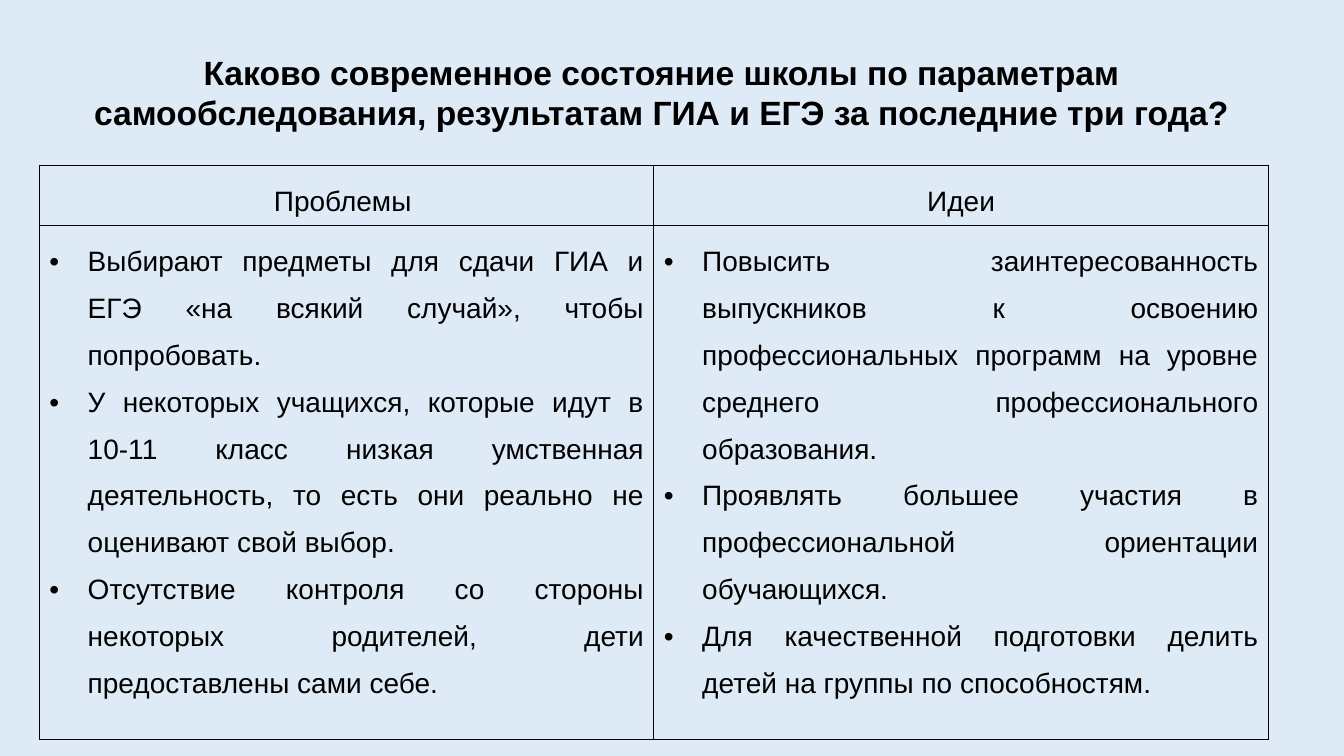
from dataclasses import dataclass

from lxml.etree import SubElement
from pptx import Presentation
from pptx.dml.color import RGBColor
from pptx.enum.text import MSO_ANCHOR, MSO_AUTO_SIZE, PP_ALIGN
from pptx.oxml.ns import qn
from pptx.util import Inches, Pt


@dataclass(frozen=True)
class Theme:
    font: str = "Arial"
    ink: RGBColor = RGBColor(0x00, 0x00, 0x00)
    background: RGBColor = RGBColor(0xDE, 0xEB, 0xF7)
    title_size: int = 24
    body_size: int = 20
    border: int = 1
    spacing: float = 1.5
    indent: float = 0.38


THEME = Theme()

TITLE = (
    "Каково современное состояние школы по параметрам "
    "самообследования, результатам ГИА и ЕГЭ за последние три года?"
)

COLUMNS = [
    ("Проблемы ", [
        "Выбирают предметы для сдачи ГИА и ЕГЭ «на всякий случай», чтобы попробовать.",
        "У некоторых учащихся, которые идут в 10-11 класс низкая умственная "
        "деятельность, то есть они реально не оценивают свой выбор.",
        "Отсутствие контроля со стороны некоторых родителей, дети предоставлены сами себе.",
    ]),
    ("Идеи", [
        "Повысить заинтересованность выпускников к освоению профессиональных "
        "программ на уровне среднего профессионального образования.",
        "Проявлять большее участия в профессиональной ориентации обучающихся.",
        "Для качественной подготовки делить детей на группы по способностям.",
    ]),
]


def add_span(para, text, size, bold=False):
    span = para.add_run()
    span.text = text
    span.font.name = THEME.font
    span.font.size = Pt(size)
    span.font.bold = bold
    span.font.color.rgb = THEME.ink


def add_bullet(para):
    properties = para._p.get_or_add_pPr()
    properties.set("marL", str(Inches(THEME.indent)))
    properties.set("indent", str(-Inches(THEME.indent)))
    SubElement(properties, qn("a:buFont"), typeface=THEME.font)
    SubElement(properties, qn("a:buChar"), char="•")


def style_cell(cell):
    properties = cell._tc.get_or_add_tcPr()
    for side in ("lnL", "lnR", "lnT", "lnB"):
        line = SubElement(properties, qn(f"a:{side}"), w=str(Pt(THEME.border)))
        fill = SubElement(line, qn("a:solidFill"))
        SubElement(fill, qn("a:srgbClr"), val=str(THEME.ink))
    cell.fill.background()


def fill_cell(cell, texts, alignment, bulleted=False):
    style_cell(cell)
    frame = cell.text_frame
    for index, text in enumerate(texts):
        para = frame.add_paragraph() if index else frame.paragraphs[0]
        para.alignment = alignment
        para.line_spacing = THEME.spacing
        if bulleted:
            add_bullet(para)
        add_span(para, text, THEME.body_size)


def place_title(page, left, top, width, height):
    box = page.shapes.title
    box.left, box.top = Inches(left), Inches(top)
    box.width, box.height = Inches(width), Inches(height)
    frame = box.text_frame
    frame.word_wrap = True
    frame.auto_size = MSO_AUTO_SIZE.NONE
    frame.vertical_anchor = MSO_ANCHOR.TOP
    para = frame.paragraphs[0]
    para.alignment = PP_ALIGN.CENTER
    add_span(para, TITLE, THEME.title_size, bold=True)


def place_table(page, left, top, width, height, header_height):
    table = page.shapes.add_table(
        2, len(COLUMNS), Inches(left), Inches(top), Inches(width), Inches(height)
    ).table
    table.first_row = False
    table.horz_banding = False
    table.rows[0].height = Inches(header_height)
    table.rows[1].height = Inches(height - header_height)
    for index, (heading, points) in enumerate(COLUMNS):
        table.columns[index].width = Inches(width / len(COLUMNS))
        fill_cell(table.cell(0, index), [heading], PP_ALIGN.CENTER)
        fill_cell(table.cell(1, index), points, PP_ALIGN.JUSTIFY, bulleted=True)


def build_comparison(deck):
    page = deck.slides.add_slide(deck.slide_layouts[5])
    page.background.fill.solid()
    page.background.fill.fore_color.rgb = THEME.background
    place_title(page, 0.39, 0.46, 12.34, 0.91)
    place_table(page, 0.39, 1.64, 12.19, 5.7, header_height=0.6)


def main():
    deck = Presentation()
    deck.slide_width = Inches(13.33)
    deck.slide_height = Inches(7.5)
    build_comparison(deck)
    deck.save("out.pptx")


if __name__ == "__main__":
    main()
